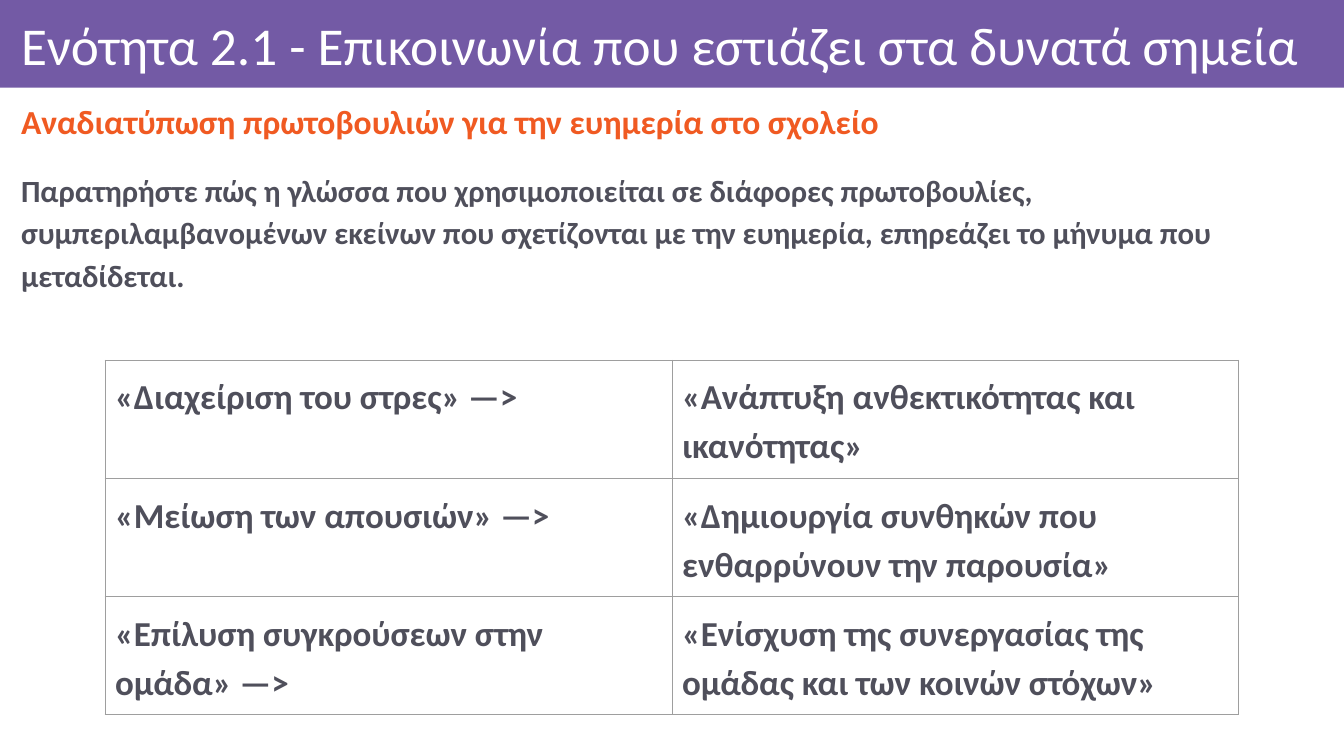
from pptx import Presentation
from pptx.dml.color import RGBColor
from pptx.enum.shapes import MSO_SHAPE
from pptx.enum.text import MSO_ANCHOR, PP_ALIGN
from pptx.oxml import parse_xml
from pptx.oxml.ns import nsdecls
from pptx.util import Pt

PURPLE = RGBColor(0x73, 0x5A, 0xA5)
ORANGE = RGBColor(0xF0, 0x5A, 0x22)
SLATE = RGBColor(0x4F, 0x4F, 0x5B)
WHITE = RGBColor(0xFF, 0xFF, 0xFF)
BORDER_GREY = RGBColor(0x9E, 0x9E, 0x9E)


def write_text(frame, text, size, color, bold, line_spacing):
    frame.word_wrap = True
    frame.text = text
    paragraph = frame.paragraphs[0]
    paragraph.line_spacing = line_spacing
    font = paragraph.runs[0].font
    font.name = "Calibri"
    font.size = Pt(size)
    font.bold = bold
    font.color.rgb = color
    return paragraph


def add_border(cell, side):
    cell_properties = cell._tc.get_or_add_tcPr()
    cell_properties.append(parse_xml(
        f'<a:{side} {nsdecls("a")} w="{Pt(0.75)}"><a:solidFill>'
        f'<a:srgbClr val="{BORDER_GREY}"/></a:solidFill></a:{side}>'))


presentation = Presentation()
presentation.slide_width = Pt(960)
presentation.slide_height = Pt(540)
slide = presentation.slides.add_slide(presentation.slide_layouts[6])

# Title band
band = slide.shapes.add_shape(MSO_SHAPE.RECTANGLE, Pt(0), Pt(0), Pt(960), Pt(62.7))
band.shadow.inherit = False
band.fill.solid()
band.fill.fore_color.rgb = PURPLE
band.line.fill.background()

# Title
title = slide.shapes.add_textbox(Pt(8), Pt(6.5), Pt(940), Pt(56.2)).text_frame
title.vertical_anchor = MSO_ANCHOR.MIDDLE
title.margin_right = title.margin_top = title.margin_bottom = Pt(4.5)
write_text(title, "Ενότητα 2.1 - Επικοινωνία που εστιάζει στα δυνατά σημεία",
           38, WHITE, False, 0.9)

# Subtitle
subtitle = slide.shapes.add_textbox(Pt(8), Pt(67), Pt(940), Pt(43)).text_frame
subtitle.vertical_anchor = MSO_ANCHOR.MIDDLE
paragraph = write_text(subtitle, "Αναδιατύπωση πρωτοβουλιών για την ευημερία στο σχολείο",
                       24, ORANGE, True, 0.9)
paragraph.alignment = PP_ALIGN.JUSTIFY

# Introduction
introduction = slide.shapes.add_textbox(Pt(8), Pt(115), Pt(952), Pt(416)).text_frame
paragraph = write_text(
    introduction,
    "Παρατηρήστε πώς η γλώσσα που χρησιμοποιείται σε διάφορες πρωτοβουλίες, "
    "συμπεριλαμβανομένων εκείνων που σχετίζονται με την ευημερία, "
    "επηρεάζει το μήνυμα που μεταδίδεται.",
    22, SLATE, True, 1.15)
paragraph.space_before = Pt(12)

# Table of reworded initiatives
initiatives = [
    ("«Διαχείριση του στρες» —>", "«Ανάπτυξη ανθεκτικότητας και ικανότητας»"),
    ("«Μείωση των απουσιών» —>", "«Δημιουργία συνθηκών που ενθαρρύνουν την παρουσία»"),
    ("«Επίλυση συγκρούσεων στην ομάδα» —>",
     "«Ενίσχυση της συνεργασίας της ομάδας και των κοινών στόχων»"),
]
table = slide.shapes.add_table(3, 2, Pt(75), Pt(257.3), Pt(810), Pt(253.2)).table
table.first_row = False
table.horz_banding = False
for row, wordings in zip(table.rows, initiatives):
    row.height = Pt(84.4)
    for cell, wording in zip(row.cells, wordings):
        cell.margin_left = cell.margin_right = Pt(7.2)
        cell.margin_top = cell.margin_bottom = Pt(7.2)
        paragraph = write_text(cell.text_frame, wording, 25, SLATE, True, 1.15)
        paragraph.space_before = paragraph.space_after = Pt(12)
        for side in ("lnL", "lnR", "lnT", "lnB"):
            add_border(cell, side)
        cell.fill.background()

presentation.save("out.pptx")
